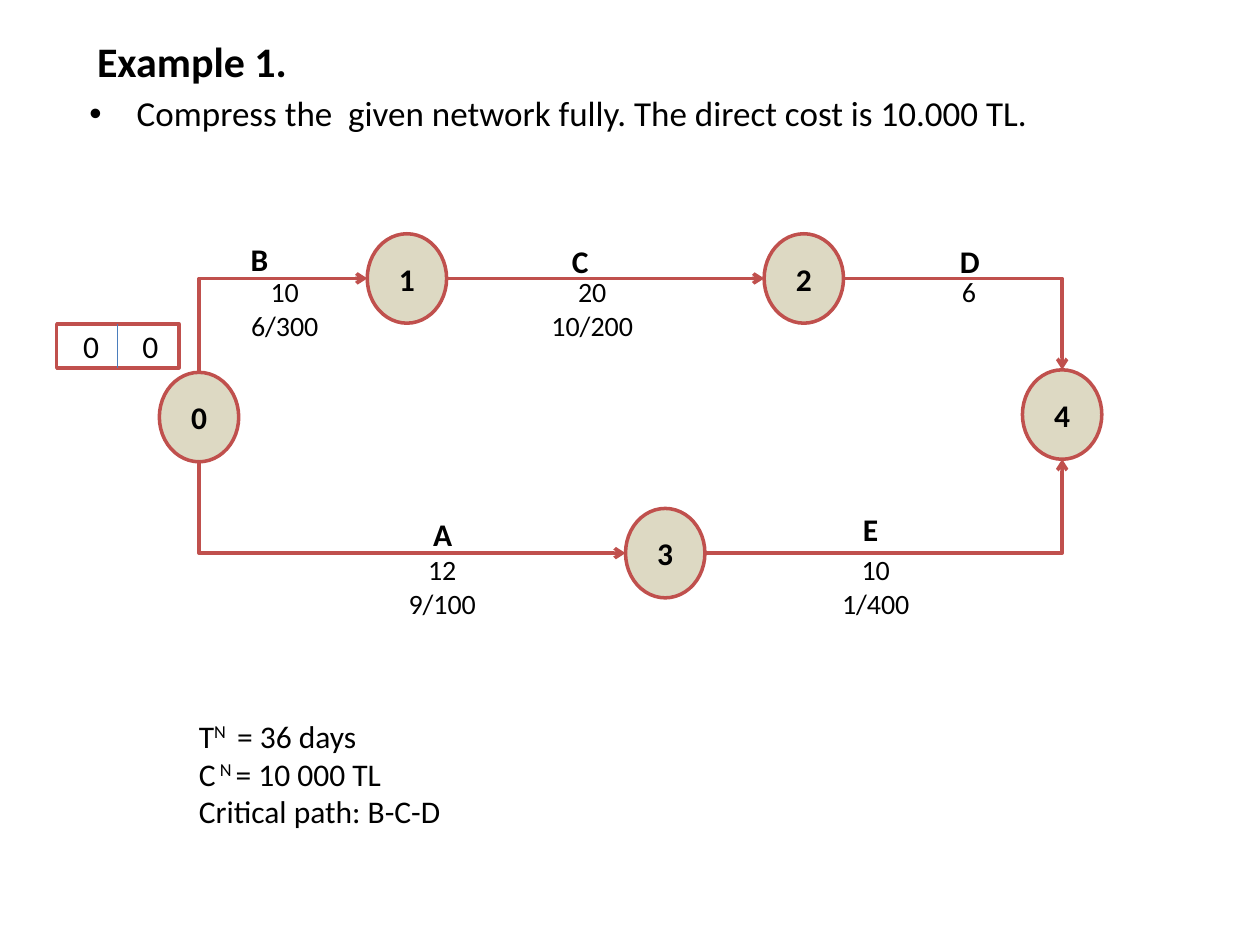
from dataclasses import dataclass

from lxml import etree
from pptx import Presentation
from pptx.dml.color import RGBColor
from pptx.enum.shapes import MSO_CONNECTOR, MSO_SHAPE
from pptx.enum.text import MSO_ANCHOR, MSO_AUTO_SIZE, PP_ALIGN
from pptx.oxml.ns import qn
from pptx.util import Inches, Pt

STRAIGHT, ELBOW = MSO_CONNECTOR.STRAIGHT, MSO_CONNECTOR.ELBOW
OVAL, RECTANGLE = MSO_SHAPE.OVAL, MSO_SHAPE.RECTANGLE
LEFT, CENTER = PP_ALIGN.LEFT, PP_ALIGN.CENTER
TOP, MIDDLE = MSO_ANCHOR.TOP, MSO_ANCHOR.MIDDLE
NO_FIT = MSO_AUTO_SIZE.NONE


@dataclass(frozen=True)
class Theme:
    font: str = "Calibri"
    ink: RGBColor = RGBColor(0, 0, 0)
    paper: RGBColor = RGBColor(255, 255, 255)
    node: RGBColor = RGBColor(0xDD, 0xD9, 0xC3)
    edge: RGBColor = RGBColor(0xC0, 0x50, 0x4D)
    divider: RGBColor = RGBColor(0x4B, 0x7E, 0xBC)
    title_size: int = 24
    body_size: int = 20
    label_size: int = 18
    value_size: int = 16
    edge_width: float = 2
    divider_width: float = 0.75


@dataclass(frozen=True)
class Box:
    left: float
    top: float
    width: float
    height: float

    def inside(self, left, top, width, height):
        return Box(self.left + left, self.top + top, width, height)

    def lengths(self):
        return [Inches(value) for value in (self.left, self.top, self.width, self.height)]


THEME = Theme()
NODE_WIDTH, NODE_HEIGHT = 0.63, 0.71
NODES = {"0": (1.13, 1.45), "1": (2.78, 0.35), "2": (5.93, 0.35),
         "3": (4.83, 2.53), "4": (7.98, 1.43)}
ACTIVITIES = [
    ("A", "0", "3", (2.89, 2.18), "12\n9/100", (3.06, 2.48)),
    ("B", "0", "1", (1.44, 0), "10\n6/300", (1.81, 0.27)),
    ("C", "1", "2", (3.99, 0.01), "20\n10/200", (4.25, 0.27)),
    ("D", "2", "4", (7.07, 0.01), "6", (7.24, 0.27)),
    ("E", "3", "4", (6.3, 2.14), "10\n1/400", (6.5, 2.48)),
]
RESULTS = [
    [("T", 0), ("N ", 30), (" = 36 days", 0)],
    [("C", 0), (" N ", 30), ("= 10 000 TL", 0)],
    [("Critical path: B-C-D", 0)],
]


def apply_format(target, values):
    for name, value in values.items():
        setattr(target, name, value)


def style_run(run, size, bold=False):
    apply_format(run.font, {"name": THEME.font, "size": Pt(size), "bold": bold})
    run.font.color.rgb = THEME.ink


def write_text(shape, text, size, bold=False, align=LEFT, anchor=TOP):
    frame = shape.text_frame
    apply_format(frame, {"word_wrap": True, "auto_size": NO_FIT, "vertical_anchor": anchor})
    paragraph = frame.paragraphs[0]
    apply_format(paragraph, {"text": text, "alignment": align})
    for run in paragraph.runs:
        style_run(run, size, bold)
    return paragraph


def add_text(slide, box, text, size, **options):
    write_text(slide.shapes.add_textbox(*box.lengths()), text, size, **options)


def add_outlined_shape(slide, kind, box, fill):
    shape = slide.shapes.add_shape(kind, *box.lengths())
    shape.shadow.inherit = False
    shape.fill.solid()
    shape.fill.fore_color.rgb = fill
    shape.line.color.rgb = THEME.edge
    shape.line.width = Pt(THEME.edge_width)
    return shape


def add_line(slide, kind, start, end, color, width, arrow=False):
    connector = slide.shapes.add_connector(kind, *map(Inches, (*start, *end)))
    connector.line.color.rgb = color
    connector.line.width = Pt(width)
    properties = connector._element.spPr
    if arrow:
        etree.SubElement(properties.find(qn("a:ln")), qn("a:tailEnd"), type="arrow")
    etree.SubElement(properties, qn("a:effectLst"))
    return connector


def bend_once(connector, start, end, vertical_first):
    properties = connector._element.spPr
    properties.find(qn("a:prstGeom")).set("prst", "bentConnector2")
    if not vertical_first:
        return
    across, down = abs(end[0] - start[0]), abs(end[1] - start[1])
    apply_format(connector, {
        "left": Inches((start[0] + end[0] - down) / 2),
        "top": Inches((start[1] + end[1] - across) / 2),
        "width": Inches(down),
        "height": Inches(across),
    })
    upward = end[1] < start[1]
    transform = properties.find(qn("a:xfrm"))
    transform.set("rot", str((90 if upward else 270) * 60000))
    transform.set("flipH", "1")
    transform.set("flipV", "1" if upward else "0")


def add_activity_arrow(slide, box, source, target):
    (x0, y0), (x1, y1) = [(box.left + x, box.top + y)
                          for x, y in (NODES[source], NODES[target])]
    side, cap = NODE_WIDTH / 2, NODE_HEIGHT / 2
    direction = 1 if y1 > y0 else -1
    start, end = (x0 + side, y0), (x1 - side, y1)
    vertical_first = source == "0"
    if vertical_first:
        start = (x0, y0 + direction * cap)
    elif y0 != y1:
        end = (x1, y1 - direction * cap)
    kind = STRAIGHT if y0 == y1 else ELBOW
    connector = add_line(slide, kind, start, end, THEME.edge, THEME.edge_width, arrow=True)
    if kind == ELBOW:
        bend_once(connector, start, end, vertical_first)


def add_time_box(slide, box):
    shape = add_outlined_shape(slide, RECTANGLE, box, THEME.paper)
    paragraph = write_text(shape, "0\t0", THEME.label_size, anchor=MIDDLE)
    shape.text_frame.margin_left = Inches(0.21)
    tabs = etree.SubElement(paragraph._p.get_or_add_pPr(), qn("a:tabLst"))
    etree.SubElement(tabs, qn("a:tab"), pos=str(Inches(0.47)), algn="l")
    middle = box.left + box.width / 2
    add_line(slide, STRAIGHT, (middle, box.top), (middle, box.top + box.height),
             THEME.divider, THEME.divider_width)


def add_network(slide, box):
    for name, (x, y) in NODES.items():
        node_box = box.inside(x - NODE_WIDTH / 2, y - NODE_HEIGHT / 2, NODE_WIDTH, NODE_HEIGHT)
        node = add_outlined_shape(slide, OVAL, node_box, THEME.node)
        write_text(node, name, THEME.label_size, bold=True, align=CENTER, anchor=MIDDLE)
    for name, source, target, name_at, values, values_at in ACTIVITIES:
        add_activity_arrow(slide, box, source, target)
        add_text(slide, box.inside(*name_at, 0.53, 0.4), name, THEME.label_size, bold=True)
        height = 0.1 + 0.27 * len(values.split("\n"))
        add_text(slide, box.inside(values_at[0] - 0.51, values_at[1], 1.02, height),
                 values, THEME.value_size, align=CENTER)
    add_time_box(slide, box.inside(0, 0.71, 0.97, 0.35))


def fill_placeholder(shape, box, text, size, bold=False):
    left, top, width, height = box.lengths()
    apply_format(shape, {"left": left, "top": top, "width": width, "height": height})
    write_text(shape, text, size, bold)


def add_results(slide, box):
    frame = slide.shapes.add_textbox(*box.lengths()).text_frame
    frame.word_wrap = True
    for index, parts in enumerate(RESULTS):
        paragraph = frame.add_paragraph() if index else frame.paragraphs[0]
        for text, baseline in parts:
            run = paragraph.add_run()
            run.text = text
            style_run(run, THEME.label_size)
            if baseline:
                run._r.get_or_add_rPr().set("baseline", str(baseline * 1000))


def main():
    presentation = Presentation()
    presentation.slide_width, presentation.slide_height = Inches(10), Inches(7.5)
    slide = presentation.slides.add_slide(presentation.slide_layouts[1])
    fill_placeholder(slide.shapes.title, Box(0.67, 0.23, 2.96, 0.5),
                     "Example 1.", THEME.title_size, bold=True)
    fill_placeholder(slide.placeholders[1], Box(0.61, 0.68, 9, 4.95),
                     "Compress the  given network fully. The direct cost is 10.000 TL.",
                     THEME.body_size)
    add_results(slide, Box(1.48, 5.64, 4.8, 1.01))
    add_network(slide, Box(0.45, 1.86, 8.3, 3.12))
    presentation.save("out.pptx")


if __name__ == "__main__":
    main()
